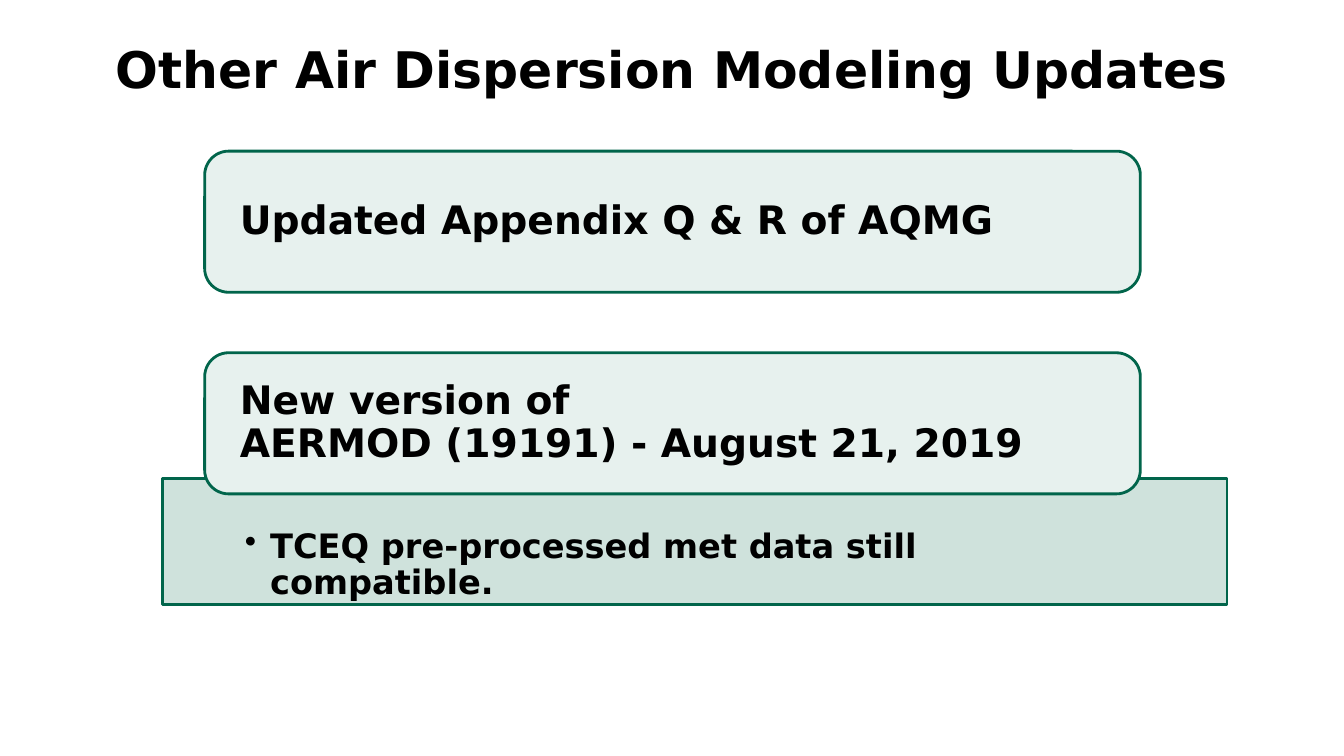
from lxml import etree
from pptx import Presentation
from pptx.dml.color import RGBColor
from pptx.enum.shapes import MSO_SHAPE
from pptx.enum.text import MSO_ANCHOR, MSO_AUTO_SIZE, PP_ALIGN
from pptx.oxml.ns import qn
from pptx.util import Inches, Pt

ROUNDED, RECT = MSO_SHAPE.ROUNDED_RECTANGLE, MSO_SHAPE.RECTANGLE
MIDDLE, TOP = MSO_ANCHOR.MIDDLE, MSO_ANCHOR.TOP
LEFT, CENTER = PP_ALIGN.LEFT, PP_ALIGN.CENTER
NO_FIT = MSO_AUTO_SIZE.NONE

FONT = "DejaVu Sans"
BLACK, GREEN, PALE, SAGE = "000000", "01654B", "E7F1EE", "CADFD9"
SLIDE_W, SLIDE_H = 13.33, 7.5

# Topics stacked at an equal pitch, each with an optional detail
TOPICS = [
    ("Updated Appendix Q & R of AQMG", None),
    ("New version of \vAERMOD (19191) - August 21, 2019",
     "TCEQ pre-processed met data still compatible."),
]
PITCH, TOPIC_H = 2, 1.4


def rgb(value):
    return RGBColor.from_string(value)


def write(shape, text, size, anchor, align, insets):
    tf = shape.text_frame
    tf.word_wrap, tf.auto_size, tf.vertical_anchor = True, NO_FIT, anchor
    (tf.margin_left, tf.margin_top,
     tf.margin_right, tf.margin_bottom) = map(Inches, insets)
    p = tf.paragraphs[0]
    p.text, p.alignment = text, align
    for r in p.runs:
        r.font.name, r.font.size, r.font.bold = FONT, Pt(size), True
        r.font.color.rgb = rgb(BLACK)
    return p


def add_panel(s, kind, box, fill):
    sp = s.shapes.add_shape(kind, *map(Inches, box))
    sp.shadow.inherit = False
    sp.fill.solid()
    sp.fill.fore_color.rgb = rgb(fill)
    sp.line.color.rgb = rgb(GREEN)
    sp.line.width = Pt(2)
    return sp


def add_title(s, box, text):
    title = s.shapes.title
    title.left, title.top, title.width, title.height = map(Inches, box)
    write(title, text, 36, MIDDLE, CENTER, (0.1, 0.05, 0.1, 0.05))


def add_detail(s, box, text):
    sp = add_panel(s, RECT, box, SAGE)
    # Slightly transparent fill
    color = sp.fill._xPr.find(qn("a:solidFill"))[0]
    etree.SubElement(color, qn("a:alpha"), val="90000")
    p = write(sp, text, 24, TOP, LEFT, (0.82, 0.5, 0.82, 0.19))
    p.line_spacing = 0.9
    # Hanging bullet
    pPr = p._p.get_or_add_pPr()
    pPr.set("marL", str(Inches(0.25)))
    pPr.set("indent", str(-Inches(0.25)))
    etree.SubElement(pPr, qn("a:buChar"), char="•")


def add_topic(s, box, heading, detail):
    left, top, width, height = box
    # The detail panel starts just behind the topic's lower edge
    if detail:
        add_detail(s, (left - 0.42, top + height - 0.15, width + 1.28, 1.25), detail)
    sp = add_panel(s, ROUNDED, box, PALE)
    sp.adjustments[0] = 0.17
    p = write(sp, heading, 28, MIDDLE, LEFT, (0.28, 0, 0.28, 0))
    p.line_spacing = 0.9


def main():
    prs = Presentation()
    prs.slide_width, prs.slide_height = Inches(SLIDE_W), Inches(SLIDE_H)
    s = prs.slides.add_slide(prs.slide_layouts[5])
    add_title(s, (0, 0.22, SLIDE_W, 0.92), "Other Air Dispersion Modeling Updates")
    for i, (heading, detail) in enumerate(TOPICS):
        add_topic(s, (2.03, 1.5 + i * PITCH, 9.28, TOPIC_H), heading, detail)
    prs.save("out.pptx")


if __name__ == "__main__":
    main()
